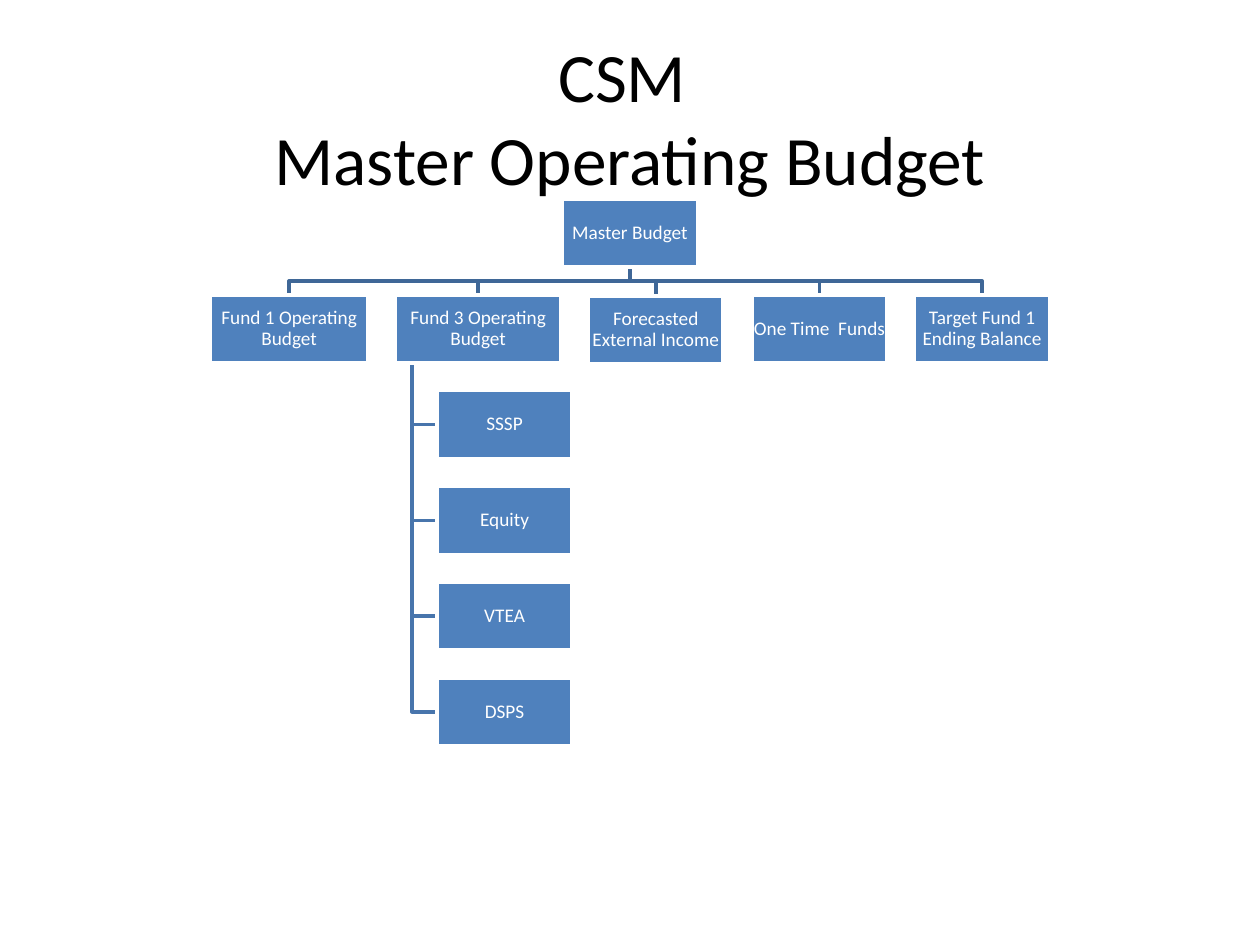
"""Build the master operating budget organisation chart slide."""
from dataclasses import dataclass

from pptx import Presentation
from pptx.dml.color import RGBColor
from pptx.enum.shapes import MSO_SHAPE
from pptx.enum.text import MSO_ANCHOR, MSO_AUTO_SIZE, PP_ALIGN
from pptx.shapes.autoshape import Shape
from pptx.slide import Slide
from pptx.util import Inches, Pt

RECTANGLE = MSO_SHAPE.RECTANGLE
MIDDLE = MSO_ANCHOR.MIDDLE
CENTER = PP_ALIGN.CENTER
NO_AUTOFIT = MSO_AUTO_SIZE.NONE

BLACK = RGBColor(0x00, 0x00, 0x00)
WHITE = RGBColor(0xFF, 0xFF, 0xFF)
BOX_BLUE = RGBColor(0x4F, 0x81, 0xBD)
FUND_LINE = RGBColor(0x3F, 0x67, 0x97)
PROGRAM_LINE = RGBColor(0x48, 0x75, 0xAC)

FONT = "Calibri"
TITLE_LAYOUT = 5
BOX_HEIGHT = 0.54
FUND_TOP = 2.34
PROGRAM_TOP = 3.1
PROGRAM_STEP = 0.76
BRANCH_INDENT = 0.13


@dataclass(frozen=True)
class BudgetBox:
    label: str
    left: float
    top: float = FUND_TOP
    width: float = 1.07

    @property
    def center(self) -> float:
        return self.left + self.width / 2

    @property
    def middle(self) -> float:
        return self.top + BOX_HEIGHT / 2

    @property
    def bottom(self) -> float:
        return self.top + BOX_HEIGHT


MASTER = BudgetBox("Master Budget", 4.465, 1.58)
FUND_3 = BudgetBox("Fund 3 Operating Budget", 3.14, width=1.31)
FUNDS = [
    BudgetBox("Fund 1 Operating Budget", 1.67, width=1.25),
    FUND_3,
    BudgetBox("Forecasted External Income", 4.67, 2.35),
    BudgetBox("One Time  Funds", 5.97),
    BudgetBox("Target Fund 1 Ending Balance", 7.26),
]
PROGRAMS = [
    BudgetBox(label, 3.47, PROGRAM_TOP + row * PROGRAM_STEP)
    for row, label in enumerate(["SSSP", "Equity", "VTEA", "DSPS"])
]


def style_outline(shape: Shape, color: RGBColor) -> None:
    shape.shadow.inherit = False
    shape.line.color.rgb = color
    shape.line.width = Pt(2)


def draw_path(slide: Slide, points: list[tuple[float, float]], color: RGBColor) -> None:
    start, *rest = [(Inches(x), Inches(y)) for x, y in points]
    builder = slide.shapes.build_freeform(*start)
    builder.add_line_segments(rest, close=False)
    path = builder.convert_to_shape()
    path.fill.background()
    style_outline(path, color)


def link_fund(slide: Slide, fund: BudgetBox) -> None:
    bend = (MASTER.bottom + fund.top) / 2
    points = [
        (MASTER.center, MASTER.bottom),
        (MASTER.center, bend),
        (fund.center, bend),
        (fund.center, fund.top),
    ]
    draw_path(slide, points, FUND_LINE)


def link_program(slide: Slide, program: BudgetBox) -> None:
    trunk = FUND_3.left + BRANCH_INDENT
    points = [
        (trunk, FUND_3.bottom),
        (trunk, program.middle),
        (program.left, program.middle),
    ]
    draw_path(slide, points, PROGRAM_LINE)


def draw_box(slide: Slide, box: BudgetBox) -> None:
    rectangle = slide.shapes.add_shape(
        RECTANGLE, Inches(box.left), Inches(box.top), Inches(box.width), Inches(BOX_HEIGHT)
    )
    rectangle.fill.solid()
    rectangle.fill.fore_color.rgb = BOX_BLUE
    style_outline(rectangle, WHITE)
    frame = rectangle.text_frame
    frame.word_wrap = True
    frame.vertical_anchor = MIDDLE
    frame.margin_left = frame.margin_right = Inches(0.01)
    frame.margin_top = frame.margin_bottom = Inches(0.01)
    label = frame.paragraphs[0]
    label.text = box.label
    label.alignment = CENTER
    label.line_spacing = 0.9
    label.font.name = FONT
    label.font.size = Pt(11)
    label.font.color.rgb = WHITE


def write_title(slide: Slide) -> None:
    title = slide.shapes.title
    title.left, title.top = Inches(0.5), Inches(0.3)
    title.width, title.height = Inches(9), Inches(1.25)
    frame = title.text_frame
    frame.auto_size = NO_AUTOFIT
    frame.vertical_anchor = MIDDLE
    heading = frame.paragraphs[0]
    heading.text = "CSM \vMaster Operating Budget"
    heading.alignment = CENTER
    heading.font.name = FONT
    heading.font.size = Pt(39.6)
    heading.font.color.rgb = BLACK


def main() -> None:
    presentation = Presentation()
    presentation.slide_width = Inches(10)
    presentation.slide_height = Inches(7.5)
    slide = presentation.slides.add_slide(presentation.slide_layouts[TITLE_LAYOUT])
    write_title(slide)
    for fund in FUNDS:
        link_fund(slide, fund)
    for program in PROGRAMS:
        link_program(slide, program)
    for box in [MASTER, *FUNDS, *PROGRAMS]:
        draw_box(slide, box)
    presentation.save("out.pptx")


if __name__ == "__main__":
    main()
